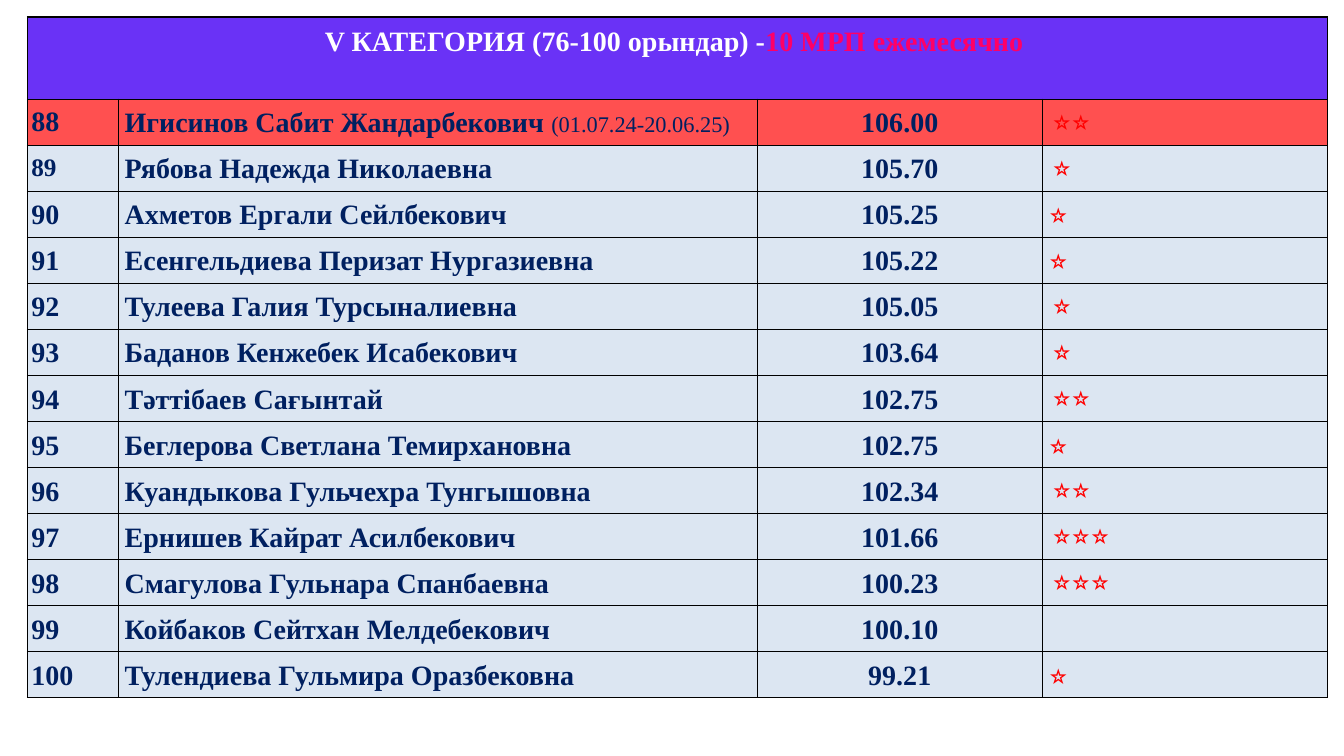
from dataclasses import dataclass

from lxml.etree import SubElement
from pptx import Presentation
from pptx.dml.color import RGBColor as Rgb
from pptx.enum.text import MSO_ANCHOR as Anchor, PP_ALIGN as Align
from pptx.oxml.ns import qn
from pptx.util import Cm, Pt


@dataclass(frozen=True)
class Theme:
    font: str = "Times New Roman"
    size: int = 20
    rank_size: int = 18
    note_size: int = 16
    header_fill: str = "6A32F6"
    highlight_fill: str = "FF5050"
    row_fill: str = "DCE6F2"
    white: str = "FFFFFF"
    pink: str = "FF0066"
    navy: str = "002060"
    red: str = "FF0000"
    border: str = "000000"
    border_width: float = 0.96
    line_spacing: float = 1.07


# Content: rank, name, score, number of stars
HEADING = "V КАТЕГОРИЯ (76-100 орындар) -"
REWARD = "10 МРП ежемесячно "
PERIOD = "(01.07.24-20.06.25)"
FIRST_RANK = 88
RANKING = [
    ("Игисинов Сабит Жандарбекович ", "106.00", 2),
    ("Рябова Надежда Николаевна", "105.70", 1),
    ("Ахметов Ергали Сейлбекович", "105.25", 1),
    ("Есенгельдиева Перизат Нургазиевна", "105.22", 1),
    ("Тулеева Галия Турсыналиевна", "105.05", 1),
    ("Баданов Кенжебек Исабекович", "103.64", 1),
    ("Тәттібаев Сағынтай", "102.75", 2),
    ("Беглерова Светлана Темирхановна", "102.75", 1),
    ("Куандыкова Гульчехра Тунгышовна", "102.34", 2),
    ("Ернишев Кайрат Асилбекович", "101.66", 3),
    ("Смагулова Гульнара Спанбаевна", "100.23", 3),
    ("Койбаков Сейтхан Мелдебекович", "100.10", 0),
    ("Тулендиева Гульмира Оразбековна", "99.21", 1),
]
CENTRED_STARS = {90, 91, 95, 100}
SINGLE_SPACED = {88, 89}

# Layout in centimetres
LEFT, TOP = 0.69, 0.43
COLUMNS = [2.29, 16.1, 7.19, 7.19]
HEADER_HEIGHT, ROW_HEIGHT = 2.07, 1.16
RANK_MARGIN, CELL_MARGIN, STAR_MARGIN = 0.1, 0.16, 0.25
EDGE_MARGIN, HEADER_MARGIN = 0.13, 0.18


class SlideBuilder:
    def __init__(self, slide, theme):
        self.slide, self.theme = slide, theme

    def table(self, row_heights):
        frame = self.slide.shapes.add_table(
            len(row_heights), len(COLUMNS), Cm(LEFT), Cm(TOP),
            Cm(sum(COLUMNS)), Cm(sum(row_heights)))
        table = frame.table
        table.horz_banding = False
        for column, width in zip(table.columns, COLUMNS):
            column.width = Cm(width)
        for row, height in zip(table.rows, row_heights):
            row.height = Cm(height)
        return table

    def borders(self, cell):
        properties = cell._tc.get_or_add_tcPr()
        for index, side in enumerate(("lnL", "lnR", "lnT", "lnB")):
            line = SubElement(properties, qn(f"a:{side}"),
                              w=str(Pt(self.theme.border_width)))
            fill = SubElement(line, qn("a:solidFill"))
            SubElement(fill, qn("a:srgbClr"), val=self.theme.border)
            properties.insert(index, line)

    def cell(self, cell, runs, fill, margin, align=Align.LEFT,
             anchor=Anchor.MIDDLE, top=EDGE_MARGIN, spacing=None):
        """Fill a cell; each run is a text with the format values that vary."""
        cell.fill.solid()
        cell.fill.fore_color.rgb = Rgb.from_string(fill)
        self.borders(cell)
        cell_format = {
            "margin_left": Cm(margin), "margin_right": Cm(margin),
            "margin_top": Cm(top), "margin_bottom": Cm(EDGE_MARGIN),
            "vertical_anchor": anchor,
        }
        for name, value in cell_format.items():
            setattr(cell, name, value)
        paragraph = cell.text_frame.paragraphs[0]
        paragraph.alignment = align
        paragraph.line_spacing = spacing or self.theme.line_spacing
        for text, color, changes in runs:
            run = paragraph.add_run()
            run.text = text
            run.font.color.rgb = Rgb.from_string(color)
            font_format = {"name": self.theme.font, "bold": True,
                           "size": Pt(self.theme.size)} | changes
            for name, value in font_format.items():
                setattr(run.font, name, value)

    def header(self, table):
        theme = self.theme
        cells = list(table.rows[0].cells)
        cells[0].merge(cells[-1])
        for covered in cells[1:]:
            self.borders(covered)
        self.cell(cells[0],
                  [(HEADING, theme.white, {}), (REWARD, theme.pink, {})],
                  theme.header_fill, RANK_MARGIN, Align.CENTER,
                  Anchor.TOP, HEADER_MARGIN)

    def ranking_row(self, cells, rank, name, score, stars):
        theme = self.theme
        first = rank == FIRST_RANK
        fill = theme.highlight_fill if first else theme.row_fill
        rank_size = theme.rank_size if rank == 89 else theme.size
        rank_cell, name_cell, score_cell, star_cell = cells

        self.cell(rank_cell, [(str(rank), theme.navy, {"size": Pt(rank_size)})],
                  fill, RANK_MARGIN,
                  spacing=1.0 if rank in SINGLE_SPACED else None)

        name_runs = [(name, theme.navy, {})]
        if first:
            note = {"size": Pt(theme.note_size), "bold": False}
            name_runs.append((PERIOD, theme.navy, note))
        self.cell(name_cell, name_runs, fill, CELL_MARGIN)
        self.cell(score_cell, [(score, theme.navy, {})], fill, CELL_MARGIN,
                  Align.CENTER)

        centred = rank in CENTRED_STARS
        star_runs = [("⭐" * stars, theme.red, {"bold": False})] if stars else []
        self.cell(star_cell, star_runs, fill,
                  CELL_MARGIN if centred else STAR_MARGIN,
                  anchor=Anchor.MIDDLE if centred else Anchor.TOP)


def main():
    deck = Presentation()
    deck.slide_width, deck.slide_height = Cm(33.87), Cm(19.05)
    slide = deck.slides.add_slide(deck.slide_layouts[6])
    builder = SlideBuilder(slide, Theme())

    # Ranking table
    table = builder.table([HEADER_HEIGHT] + [ROW_HEIGHT] * len(RANKING))
    builder.header(table)
    for index, entry in enumerate(RANKING):
        builder.ranking_row(table.rows[index + 1].cells,
                            FIRST_RANK + index, *entry)

    deck.save("out.pptx")


if __name__ == "__main__":
    main()
